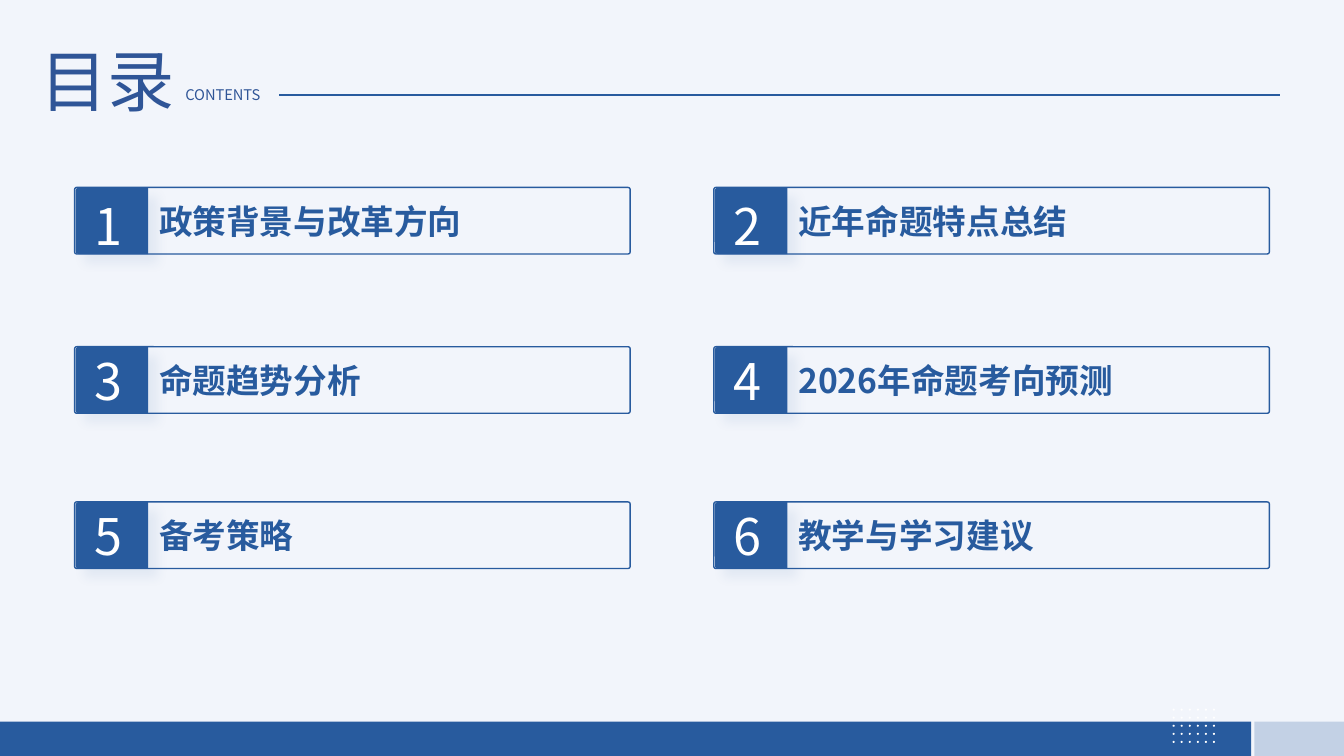
import pptx
import pptx.util
import pptx.dml.color
import pptx.enum.shapes
import pptx.enum.text
import pptx.oxml
import pptx.oxml.ns
import lxml.etree

# Content
TITLE, SUBTITLE = "目录", "CONTENTS"
CHAPTERS = [
    "政策背景与改革方向", "近年命题特点总结",
    "命题趋势分析", "2026年命题考向预测",
    "备考策略", "教学与学习建议",
]

# Theme
THEME = {
    "font": "Noto Sans CJK SC",
    "paper": "F2F5FB", "blue": "285B9E", "ink": "2F5597", "white": "FFFFFF",
    "title": 48, "number": 36, "chapter": 24, "subtitle": 10.5,
}

# Layout, in inches
COLUMN_LEFTS = [0.74, 7.08]
ROWS = [(1.86, 0.03), (3.44, -0.02), (4.98, -0.02)]  # card top, number offset
CARD_W, CARD_H, BADGE_W = 5.51, 0.66, 0.72
DOT_COLUMNS, DOT_ROWS, DOT_STEP, DOT_SIZE = 6, 5, 0.08, 0.02

Inches, Pt = pptx.util.Inches, pptx.util.Pt
SHAPE = pptx.enum.shapes.MSO_SHAPE
qn = pptx.oxml.ns.qn


def color(name):
    return pptx.dml.color.RGBColor.from_string(THEME[name])


def add_block(s, kind, box, fill=None, line=None):
    sp = s.shapes.add_shape(kind, *map(Inches, box))
    sp.shadow.inherit = False
    if fill:
        sp.fill.solid()
        sp.fill.fore_color.rgb = color(fill)
    else:
        sp.fill.background()
    if line:
        sp.line.color.rgb = color(line)
        sp.line.width = Pt(1)
    else:
        sp.line.fill.background()
    return sp


def add_label(s, text, box, size, ink, bold=False, wrap=False):
    tf = s.shapes.add_textbox(*map(Inches, box)).text_frame
    tf.word_wrap = wrap
    tf.auto_size = pptx.enum.text.MSO_AUTO_SIZE.SHAPE_TO_FIT_TEXT
    tf.text = text
    r = tf.paragraphs[0].runs[0]
    r.font.size = Pt(THEME[size])
    r.font.bold = bold
    r.font.color.rgb = color(ink)
    r.font.name = THEME["font"]
    ea = lxml.etree.SubElement(r.font._element, qn("a:ea"))
    ea.set("typeface", THEME["font"])


def set_alpha(clr, percent):
    lxml.etree.SubElement(clr, qn("a:alpha")).set("val", str(percent * 1000))


def add_soft_shadow(sp):
    effects = sp._element.spPr.find(qn("a:effectLst"))
    shadow = lxml.etree.SubElement(effects, qn("a:outerShdw"), {
        "blurRad": str(Pt(8)), "dist": str(Pt(9)), "dir": str(45 * 60000),
        "algn": "tl", "rotWithShape": "0"})
    clr = lxml.etree.SubElement(shadow, qn("a:srgbClr"), val=THEME["blue"])
    set_alpha(clr, 7)


def add_footer(s):
    add_block(s, SHAPE.RECTANGLE, (0, 7.16, 12.41, 0.34), "blue")
    pale = add_block(s, SHAPE.RECTANGLE, (12.44, 7.16, 0.89, 0.34), "blue")
    set_alpha(pale._element.spPr.find(qn("a:solidFill"))[0], 23)
    for col in range(DOT_COLUMNS):
        for row in range(DOT_ROWS):
            x, y = 11.63 + col * DOT_STEP, 7.03 + row * DOT_STEP
            add_block(s, SHAPE.OVAL, (x, y, DOT_SIZE, DOT_SIZE), "white")


def add_header(s):
    add_label(s, TITLE, (0.3, 0.34, 1.55, 0.91), "title", "ink")
    add_label(s, SUBTITLE, (1.74, 0.8, 1.03, 0.29), "subtitle", "ink")
    rule = s.shapes.add_connector(
        pptx.enum.shapes.MSO_CONNECTOR.STRAIGHT,
        Inches(2.77), Inches(0.94), Inches(12.7), Inches(0.94))
    rule.line.color.rgb = color("blue")
    rule.line.width = Pt(1.5)
    lxml.etree.SubElement(rule._element.spPr, qn("a:effectLst"))


def add_chapter(s, index, chapter):
    row, col = divmod(index, len(COLUMN_LEFTS))
    left = COLUMN_LEFTS[col]
    top, number_offset = ROWS[row]

    # Outlined card
    card = add_block(s, SHAPE.ROUNDED_RECTANGLE, (left, top, CARD_W, CARD_H),
                     line="blue")
    card.adjustments[0] = 0.031

    # Number badge, turned so that its rounded corners face left
    badge = add_block(s, SHAPE.ROUND_2_SAME_RECTANGLE,
                      (left + 0.04, top - 0.03, CARD_H, BADGE_W), "blue")
    badge.rotation = 270
    badge.adjustments[0], badge.adjustments[1] = 0.045, 0
    add_soft_shadow(badge)

    # Number and chapter name
    add_label(s, str(index + 1), (left + 0.1, top + number_offset, 0.55, 0.71),
              "number", "white")
    add_label(s, chapter, (left + 0.74, top + 0.08, 4.77, 0.5),
              "chapter", "blue", bold=True, wrap=True)


def main():
    prs = pptx.Presentation()
    prs.slide_width, prs.slide_height = Inches(13.33), Inches(7.5)
    s = prs.slides.add_slide(prs.slide_layouts[6])
    s.background.fill.solid()
    s.background.fill.fore_color.rgb = color("paper")
    add_footer(s)
    for index, chapter in enumerate(CHAPTERS):
        add_chapter(s, index, chapter)
    add_header(s)
    prs.save("out.pptx")


if __name__ == "__main__":
    main()
